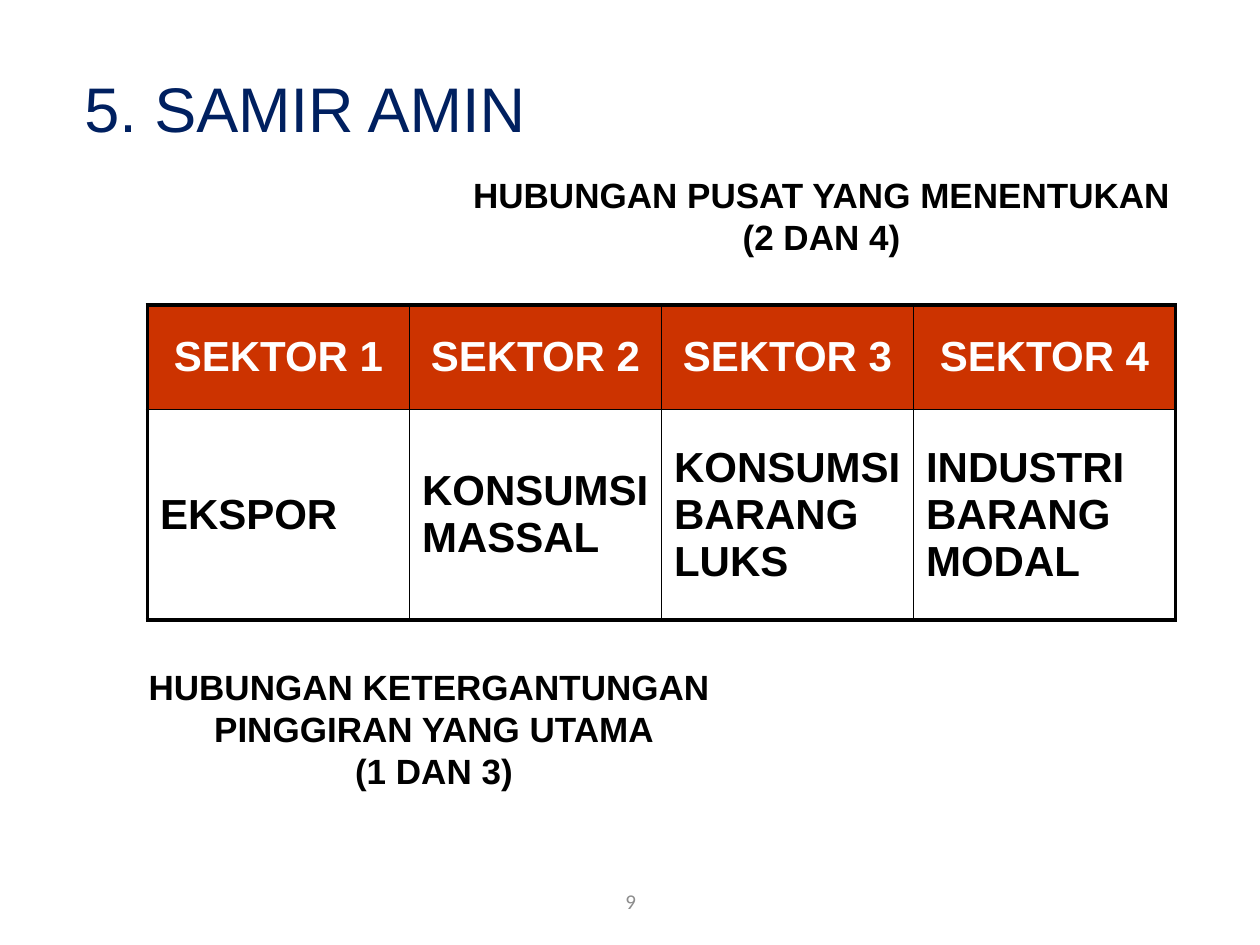
from dataclasses import dataclass

import pptx
import pptx.dml.color
import pptx.enum.text
import pptx.oxml
import pptx.oxml.ns
import pptx.util
from pptx.dml.color import RGBColor
from pptx.util import Inches

NAVY = RGBColor(0x00, 0x20, 0x60)
OUTLINE_BLUE = RGBColor(0x00, 0x33, 0x99)
BLACK = RGBColor(0x00, 0x00, 0x00)
WHITE = RGBColor(0xFF, 0xFF, 0xFF)
GRAY = RGBColor(0x8C, 0x8C, 0x8C)
HEADER_RED = RGBColor(0xCC, 0x33, 0x00)

ALIGN = pptx.enum.text.PP_ALIGN
ANCHOR = pptx.enum.text.MSO_ANCHOR
AUTO_SIZE = pptx.enum.text.MSO_AUTO_SIZE
THIN, THICK = 1, 2.25


@dataclass(frozen=True)
class Style:
    size: float
    color: RGBColor
    bold: bool = False
    font: str = "Arial"
    align: ALIGN = ALIGN.CENTER


@dataclass(frozen=True)
class Caption:
    text: str
    left: float
    top: float
    width: float
    height: float
    style: Style
    anchor: ANCHOR = ANCHOR.TOP
    auto_size: AUTO_SIZE = AUTO_SIZE.SHAPE_TO_FIT_TEXT
    wrap: bool = False


@dataclass(frozen=True)
class Sector:
    name: str
    output: str
    width: float


RELATION = Style(20, BLACK, bold=True)
HEADER = Style(24, WHITE, bold=True)
OUTPUT = Style(24, BLACK, bold=True, align=ALIGN.LEFT)

TITLE = Caption("5. SAMIR AMIN", 0.42, 0.5, 4, 0.42, Style(36, NAVY),
                auto_size=AUTO_SIZE.NONE)
CAPTIONS = [
    Caption("9", 3.42, 6.95, 3.17, 0.4, Style(12, GRAY, font="Calibri"),
            ANCHOR.MIDDLE, AUTO_SIZE.NONE, True),
    Caption("HUBUNGAN PUSAT YANG MENENTUKAN\n(2 DAN 4)",
            3.63, 1.33, 5.78, 0.77, RELATION),
    Caption("HUBUNGAN KETERGANTUNGAN \nPINGGIRAN YANG UTAMA\n(1 DAN 3)",
            1.08, 5.23, 4.73, 1.1, RELATION),
]
SECTORS = [
    Sector("SEKTOR 1", "EKSPOR", 2.08),
    Sector("SEKTOR 2", "KONSUMSI MASSAL", 2),
    Sector("SEKTOR 3", "KONSUMSI BARANG LUKS", 2),
    Sector("SEKTOR 4", "INDUSTRI BARANG MODAL", 2.08),
]
ROW_HEIGHTS = [0.83, 1.67]


def write(frame, text: str, style: Style) -> None:
    frame.text = text
    for paragraph in frame.paragraphs:
        paragraph.alignment = style.align
        for run in paragraph.runs:
            run.font.name = style.font
            run.font.size = pptx.util.Pt(style.size)
            run.font.bold = style.bold
            run.font.color.rgb = style.color


def line_element(tag: str, color: RGBColor, points: float):
    return pptx.oxml.parse_xml(
        f'<a:{tag} {pptx.oxml.ns.nsdecls("a")} w="{int(points * 12700)}">'
        f'<a:solidFill><a:srgbClr val="{color}"/></a:solidFill></a:{tag}>')


def fill_caption(shape, caption: Caption) -> None:
    shape.left, shape.top = Inches(caption.left), Inches(caption.top)
    shape.width, shape.height = Inches(caption.width), Inches(caption.height)
    frame = shape.text_frame
    write(frame, caption.text, caption.style)
    frame.word_wrap = caption.wrap
    frame.auto_size = caption.auto_size
    frame.vertical_anchor = caption.anchor


def add_title(slide) -> None:
    title = slide.shapes.title
    fill_caption(title, TITLE)
    for run in title.text_frame.paragraphs[0].runs:
        run.font._element.insert(0, line_element("ln", OUTLINE_BLUE, 0.75))


def set_borders(cell, left: float, right: float, top: float, bottom: float) -> None:
    properties = cell._tc.get_or_add_tcPr()
    sides = {"lnL": left, "lnR": right, "lnT": top, "lnB": bottom}
    for position, (tag, points) in enumerate(sides.items()):
        properties.insert(position, line_element(tag, BLACK, points))


def add_sector_table(slide) -> None:
    table = slide.shapes.add_table(
        len(ROW_HEIGHTS), len(SECTORS), Inches(1.17), Inches(2.42),
        Inches(sum(sector.width for sector in SECTORS)),
        Inches(sum(ROW_HEIGHTS))).table
    table.first_row = False
    table.horz_banding = False
    for row, height in zip(table.rows, ROW_HEIGHTS):
        row.height = Inches(height)
    last = len(SECTORS) - 1
    for column, sector in enumerate(SECTORS):
        table.columns[column].width = Inches(sector.width)
        left = THICK if column == 0 else THIN
        right = THICK if column == last else THIN

        header = table.cell(0, column)
        write(header.text_frame, sector.name, HEADER)
        header.fill.solid()
        header.fill.fore_color.rgb = HEADER_RED
        set_borders(header, left, right, THICK, THIN)

        output = table.cell(1, column)
        write(output.text_frame, sector.output, OUTPUT)
        output.fill.background()
        set_borders(output, left, right, THIN, THICK)

        for cell in (header, output):
            cell.vertical_anchor = ANCHOR.MIDDLE


def main() -> None:
    deck = pptx.Presentation()
    deck.slide_width, deck.slide_height = Inches(10), Inches(7.5)
    slide = deck.slides.add_slide(deck.slide_layouts[5])
    add_title(slide)
    add_sector_table(slide)
    for caption in CAPTIONS:
        fill_caption(slide.shapes.add_textbox(0, 0, 0, 0), caption)
    deck.save("out.pptx")


if __name__ == "__main__":
    main()
